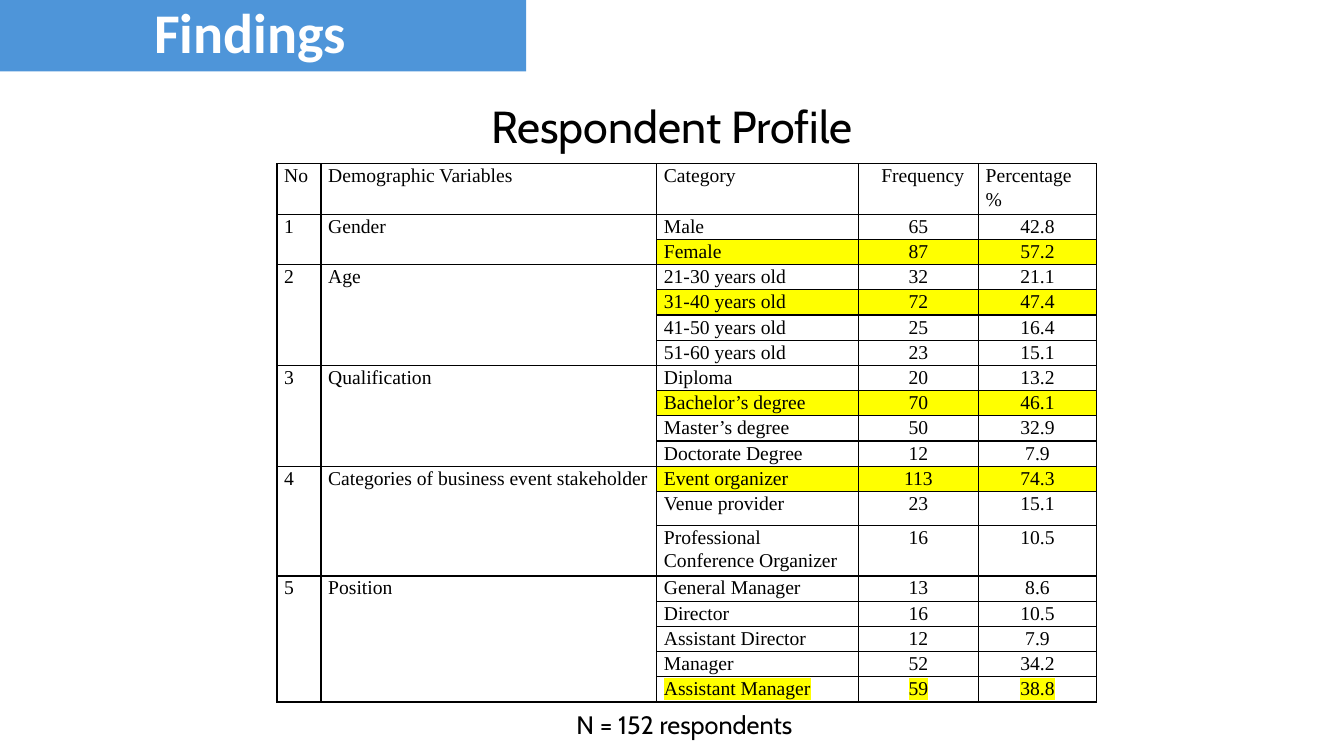
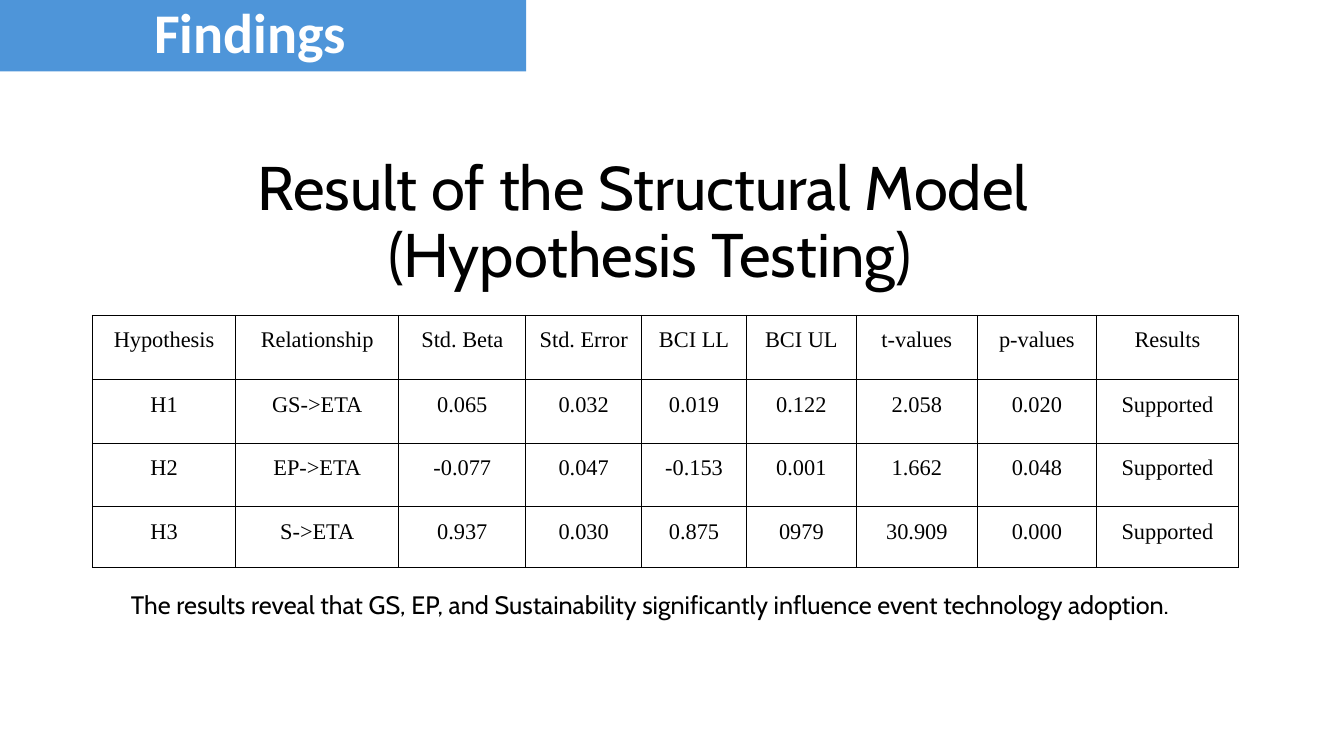
from lxml import etree
from pptx import Presentation
from pptx.dml.color import RGBColor
from pptx.enum.shapes import MSO_SHAPE
from pptx.enum.text import MSO_ANCHOR as Anchor, MSO_AUTO_SIZE as AutoSize, PP_ALIGN as Align
from pptx.oxml.ns import qn
from pptx.util import Cm, Pt

BLACK = RGBColor(0x00, 0x00, 0x00)
WHITE = RGBColor(0xFF, 0xFF, 0xFF)
BLUE = RGBColor(0x4E, 0x95, 0xD9)
YELLOW = RGBColor(0xFF, 0xFF, 0x00)
HEADING_FONT = "Cabin"
BAND_FONT = "Calibri"
TABLE_FONT = "Times New Roman"


def write(frame, text, size=18, font=HEADING_FONT, color=BLACK, bold=False,
          align=Align.CENTER, line_spacing=1.0, after=0, highlight=None):
    frame.word_wrap = True
    paragraph = frame.paragraphs[0]
    paragraph.text = text
    paragraph.alignment = align
    paragraph.line_spacing = line_spacing
    paragraph.space_before = Pt(0)
    paragraph.space_after = Pt(after)
    for run in paragraph.runs:
        run.font.size = Pt(size)
        run.font.bold = bold
        run.font.name = font
        run.font.color.rgb = color
        if highlight is not None:
            marker = etree.Element(qn("a:highlight"))
            etree.SubElement(marker, qn("a:srgbClr"), val=str(highlight))
            run.font._element.find(qn("a:solidFill")).addnext(marker)


def add_grid(slide, left, top, widths, heights):
    grid = slide.shapes.add_table(len(heights), len(widths), Cm(left), Cm(top),
                                  Cm(sum(widths)), Cm(sum(heights))).table
    grid.first_row = False
    grid.horz_banding = False
    for column, width in zip(grid.columns, widths):
        column.width = Cm(width)
    for row, height in zip(grid.rows, heights):
        row.height = Cm(height)
    for cell in grid.iter_cells():
        cell.margin_left = cell.margin_right = Cm(0.18)
        cell.margin_top = cell.margin_bottom = 0
        properties = cell._tc.get_or_add_tcPr()
        for side in ("a:lnL", "a:lnR", "a:lnT", "a:lnB"):
            border = etree.SubElement(properties, qn(side), w=str(Pt(1)))
            paint = etree.SubElement(border, qn("a:solidFill"))
            etree.SubElement(paint, qn("a:srgbClr"), val=str(BLACK))
        cell.fill.solid()
        cell.fill.fore_color.rgb = WHITE
    return grid


deck = Presentation()
deck.slide_width = Cm(33.87)
deck.slide_height = Cm(19.05)

pages = [
    ("Respondent Profile", 32, (2.33, 1.8, 29.21, 2.9),
     "N = 152 respondents", (10.67, 17.75, 13.16, 1.02), Align.CENTER),
    ("Result of the Structural Model\v (Hypothesis Testing)", 44, (1.6, 3.81, 29.21, 3.68),
     "The results reveal that GS, EP, and Sustainability significantly influence "
     "event technology adoption.", (3.05, 14.73, 27.74, 1.02), Align.LEFT),
]
for heading, heading_size, heading_place, caption, caption_place, caption_align in pages:
    slide = deck.slides.add_slide(deck.slide_layouts[5])
    title = slide.shapes.title
    title.left, title.top, title.width, title.height = map(Cm, heading_place)
    title.text_frame.auto_size = AutoSize.NONE
    title.text_frame.vertical_anchor = Anchor.MIDDLE
    write(title.text_frame, heading, size=heading_size, line_spacing=0.9)

    note = slide.shapes.add_textbox(*map(Cm, caption_place))
    write(note.text_frame, caption, align=caption_align)

    band = slide.shapes.add_shape(MSO_SHAPE.RECTANGLE, 0, 0, Cm(13.26), Cm(1.8))
    band.shadow.inherit = False
    band.fill.solid()
    band.fill.fore_color.rgb = BLUE
    band.line.fill.background()
    band.text_frame.margin_right = Cm(0.9)
    band.text_frame.vertical_anchor = Anchor.MIDDLE
    write(band.text_frame, "Findings", size=40, font=BAND_FONT, color=WHITE,
          bold=True, line_spacing=0.9)

profile_slide, hypothesis_slide = deck.slides

profile_headers = ["No", "Demographic Variables", "Category", "Frequency", "Percentage %"]
demographics = [
    ("Gender", [("Male", 65, 42.8), ("Female", 87, 57.2)]),
    ("Age", [("21-30 years old", 32, 21.1), ("31-40 years old", 72, 47.4),
             ("41-50 years old", 25, 16.4), ("51-60 years old", 23, 15.1)]),
    ("Qualification", [("Diploma", 20, 13.2), ("Bachelor’s degree", 70, 46.1),
                       ("Master’s degree", 50, 32.9), ("Doctorate Degree", 12, 7.9)]),
    ("Categories of business event stakeholder",
     [("Event organizer", 113, 74.3), ("Venue provider", 23, 15.1),
      ("Professional Conference Organizer", 16, 10.5)]),
    ("Position", [("General Manager", 13, 8.6), ("Director", 16, 10.5),
                  ("Assistant Director", 12, 7.9), ("Manager", 52, 34.2),
                  ("Assistant Manager", 59, 38.8)]),
]
profile_style = dict(size=14, font=TABLE_FONT, line_spacing=1.07, after=8)
profile_heights = [1.16] + [0.61] * 11 + [0.61, 0.86, 1.25][1:] + [0.61] * 5
profile_heights.insert(1, 0.61) if len(profile_heights) < 19 else None
profile = add_grid(profile_slide, 6.98, 4.13, [1.11, 8.46, 5.08, 3.03, 2.97], profile_heights)
for column, header in enumerate(profile_headers):
    write(profile.cell(0, column).text_frame, header, align=Align.LEFT, **profile_style)
profile.cell(0, 3).margin_left = Cm(0.58)

first_row = 1
for number, (variable, answers) in enumerate(demographics, start=1):
    last_row = first_row + len(answers) - 1
    for column, label in enumerate([str(number), variable]):
        profile.cell(first_row, column).merge(profile.cell(last_row, column))
        write(profile.cell(first_row, column).text_frame, label, align=Align.LEFT, **profile_style)
    top_frequency = max(frequency for _, frequency, _ in answers)
    for row, answer in enumerate(answers, start=first_row):
        is_top = answer[1] == top_frequency
        marks_text = is_top and variable == "Position"
        for column, value in enumerate(answer, start=2):
            cell = profile.cell(row, column)
            write(cell.text_frame, str(value), align=Align.LEFT if column == 2 else Align.CENTER,
                  highlight=YELLOW if marks_text else None, **profile_style)
            if is_top and not marks_text:
                cell.fill.fore_color.rgb = YELLOW
    first_row = last_row + 1

hypothesis_rows = [
    ["Hypothesis", "Relationship", "Std. Beta", "Std. Error", "BCI LL", "BCI UL",
     "t-values", "p-values", "Results"],
    ["H1", "GS->ETA", "0.065", "0.032", "0.019", "0.122", "2.058", "0.020", "Supported"],
    ["H2", "EP->ETA", "-0.077", "0.047", "-0.153", "0.001", "1.662", "0.048", "Supported"],
    ["H3", "S->ETA", "0.937", "0.030", "0.875", "0979", "30.909", "0.000", "Supported"],
]
hypotheses = add_grid(hypothesis_slide, 2.33, 7.95,
                      [3.61, 4.11, 3.2, 2.92, 2.64, 2.77, 3.05, 3, 3.58],
                      [1.62, 1.6, 1.6, 1.53])
for row, values in enumerate(hypothesis_rows):
    for column, value in enumerate(values):
        write(hypotheses.cell(row, column).text_frame, value, size=16, font=TABLE_FONT,
              line_spacing=1.5, after=8)

deck.save("out.pptx")
